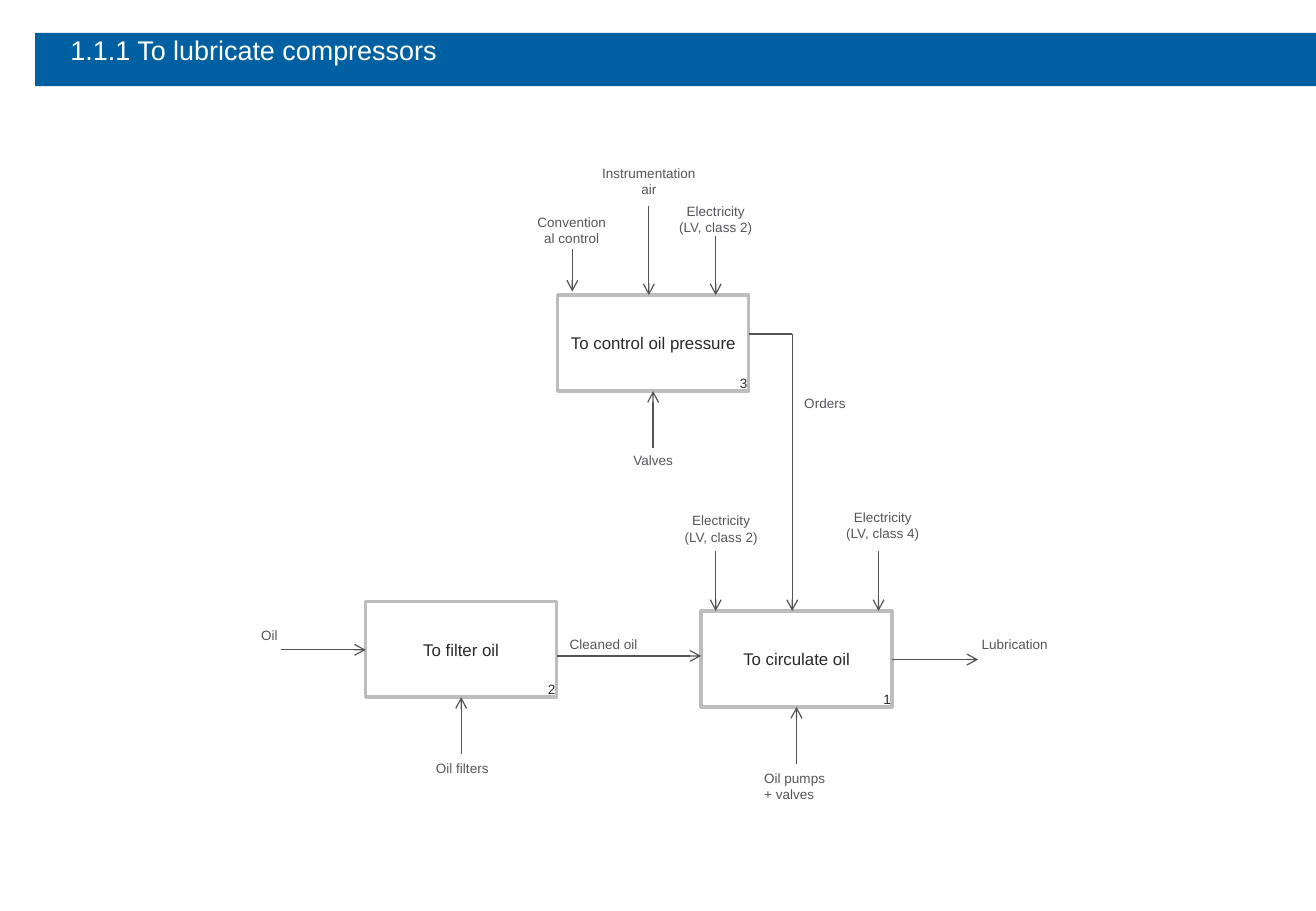
from pptx import Presentation
from pptx.dml.color import RGBColor
from pptx.enum.shapes import MSO_CONNECTOR as CONN, MSO_SHAPE as SHAPE
from pptx.enum.text import MSO_ANCHOR as ANCHOR, MSO_AUTO_SIZE as AUTOSIZE, PP_ALIGN as ALIGN
from pptx.oxml.ns import qn
from pptx.util import Inches, Pt
from lxml.etree import SubElement

BOX_W, BOX_H = 1.57, 0.79


def rgb(value):
    return RGBColor.from_string(value)


class Diagram:
    FONT = "Arial"
    BLUE, WHITE = "0060A1", "FFFFFF"
    DARK, LABEL, LINE, BORDER = "2A2A2D", "55555A", "535358", "BDBDBD"

    def __init__(self, prs):
        self.s = prs.slides.add_slide(prs.slide_layouts[5])

    def add_text(self, tf, lines, size, color, align):
        for i, line in enumerate(lines):
            p = tf.paragraphs[0] if i == 0 else tf.add_paragraph()
            p.alignment = align
            r = p.add_run()
            r.text = line
            r.font.name, r.font.size = self.FONT, Pt(size)
            r.font.color.rgb = rgb(color)

    def rect(self, x, y, w, h, fill, border=None):
        sp = self.s.shapes.add_shape(SHAPE.RECTANGLE, Inches(x), Inches(y), Inches(w), Inches(h))
        sp.shadow.inherit = False
        sp.fill.solid()
        sp.fill.fore_color.rgb = rgb(fill)
        if border:
            sp.line.color.rgb = rgb(border)
            sp.line.width = Pt(2)
        else:
            sp.line.fill.background()
        return sp

    def title(self, text):
        bar = self.rect(0.29, 0.27, 10.54, 0.44, self.BLUE)
        self.s.shapes._spTree.insert(2, bar._element)  # behind the title
        sp = self.s.shapes.title
        sp.left, sp.top, sp.width, sp.height = Inches(0.58), Inches(0.28), Inches(9.75), Inches(0.39)
        tf = sp.text_frame
        tf.auto_size = AUTOSIZE.NONE
        tf.vertical_anchor = ANCHOR.TOP
        tf.margin_left = tf.margin_top = tf.margin_right = tf.margin_bottom = 0
        self.add_text(tf, [text], 16, self.WHITE, ALIGN.LEFT)

    def label(self, x, y, w, *lines, align=ALIGN.CENTER, color=LABEL, wrap=True):
        h = 0.24 if len(lines) == 1 else 0.37
        tf = self.s.shapes.add_textbox(Inches(x), Inches(y), Inches(w), Inches(h)).text_frame
        tf.word_wrap = wrap
        self.add_text(tf, lines, 8, color, align)

    def function(self, x, y, text, number):
        tf = self.rect(x, y, BOX_W, BOX_H, self.WHITE, self.BORDER).text_frame
        tf.word_wrap = True
        tf.margin_left = tf.margin_right = Inches(0.05)
        tf.vertical_anchor = ANCHOR.MIDDLE
        self.add_text(tf, [text], 10, self.DARK, ALIGN.CENTER)
        self.label(x + BOX_W - 0.18, y + BOX_H - 0.18, 0.27, number,
                   align=ALIGN.RIGHT, color=self.DARK, wrap=False)

    def flow(self, x1, y1, x2, y2, arrow=True):
        c = self.s.shapes.add_connector(CONN.STRAIGHT, Inches(x1), Inches(y1), Inches(x2), Inches(y2))
        c.line.color.rgb = rgb(self.LINE)
        c.line.width = Pt(0.75)
        if arrow:
            SubElement(c.line._get_or_add_ln(), qn("a:tailEnd"), type="arrow")
        SubElement(c._element.spPr, qn("a:effectLst"))


def main():
    prs = Presentation()
    prs.slide_width, prs.slide_height = Inches(10.83), Inches(7.5)
    d = Diagram(prs)
    d.title("1.1.1 To lubricate compressors")

    # Functions
    control, circulate, filtering = (4.59, 2.43), (5.77, 5.03), (3.01, 4.95)
    d.function(*control, "To control oil pressure", "3")
    d.function(*circulate, "To circulate oil", "1")
    d.function(*filtering, "To filter oil", "2")

    # Inputs and outputs, left to right
    d.flow(2.31, 5.35, filtering[0], 5.35)
    d.flow(filtering[0] + BOX_W, 5.4, circulate[0], 5.4)
    d.flow(circulate[0] + BOX_W, 5.43, 8.05, 5.43)
    for x, y, w, text in [(2.05, 5.11, 0.39, "Oil"), (4.59, 5.19, 0.87, "Cleaned oil"),
                          (7.98, 5.19, 0.87, "Lubrication"), (6.52, 3.2, 0.71, "Orders")]:
        d.label(x, y, w, text, align=ALIGN.LEFT)

    # Supports, rising to the middle of each function
    for x, y in (control, circulate, filtering):
        middle, bottom = x + BOX_W / 2, y + BOX_H
        d.flow(middle, bottom + 0.47, middle, bottom)
    d.label(4.94, 3.67, 0.87, "Valves")
    d.label(3.41, 6.21, 0.79, "Oil filters")
    d.label(6.19, 6.29, 0.79, "Oil pumps", "+ valves", align=ALIGN.LEFT)

    # Controls, coming down onto the functions
    for x, top, bottom in [(4.71, 2.05, 2.4), (5.34, 1.7, control[1]), (5.89, 1.94, control[1]),
                           (5.89, 4.54, circulate[1]), (7.23, 4.54, circulate[1])]:
        d.flow(x, top, x, bottom)
    d.label(4.31, 1.71, 0.79, "Conventional control")
    d.label(4.79, 1.31, 1.1, "Instrumentation air")
    d.label(5.42, 1.62, 0.94, "Electricity", "(LV, class 2)")
    d.label(5.5, 4.17, 0.87, "Electricity", "(LV, class 2)")
    d.label(6.83, 4.14, 0.87, "Electricity", "(LV, class 4)")

    # Orders from pressure control to circulation
    d.flow(control[0] + BOX_W, 2.75, 6.52, 2.75, arrow=False)
    d.flow(6.52, 2.75, 6.52, circulate[1])

    prs.save("out.pptx")


if __name__ == "__main__":
    main()
